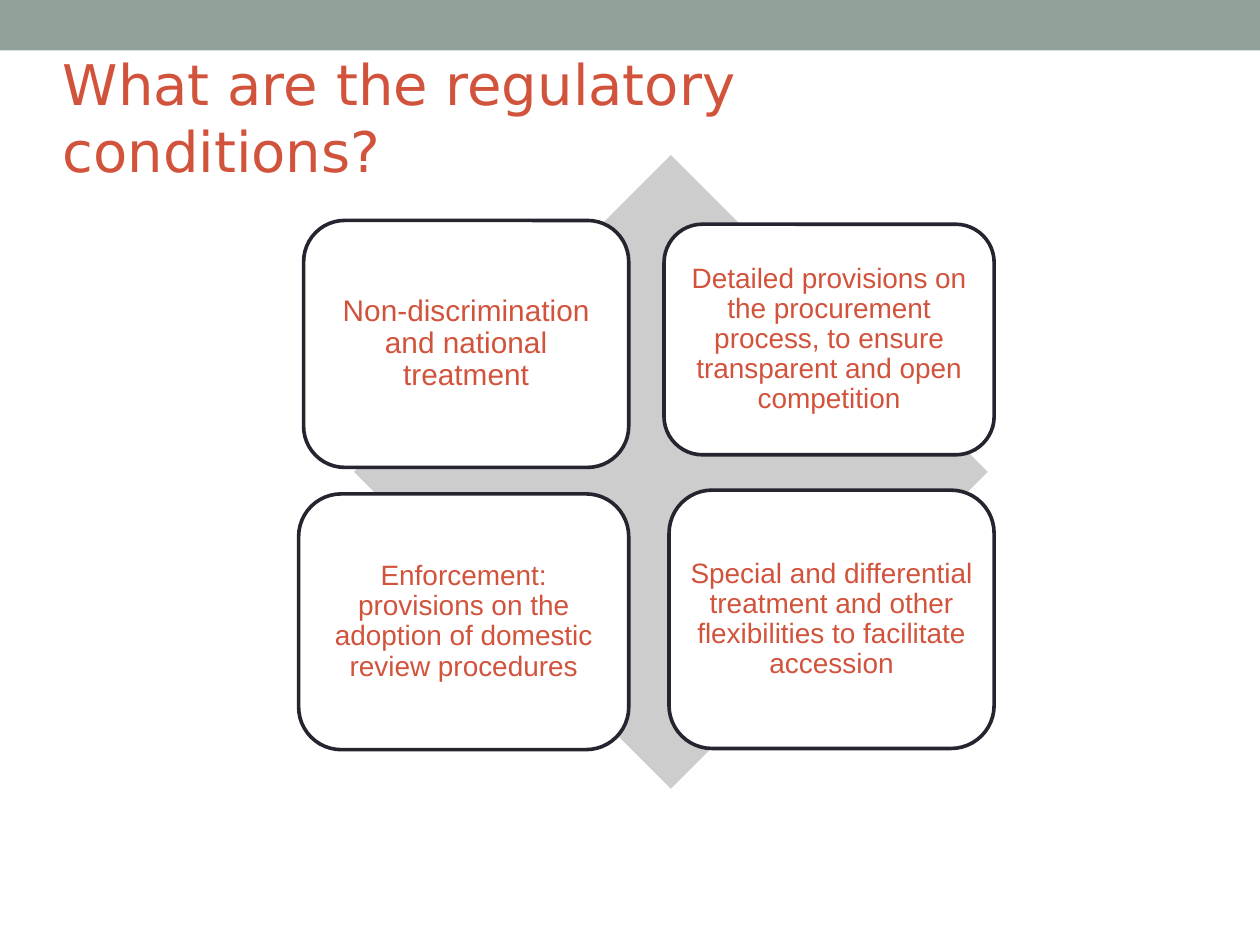
"""Build a slide that sets four regulatory conditions around a diamond."""
from pptx import Presentation
from pptx.dml.color import RGBColor
from pptx.enum.shapes import MSO_SHAPE
from pptx.enum.text import MSO_ANCHOR, PP_ALIGN
from pptx.util import Inches, Pt

RECTANGLE, DIAMOND = MSO_SHAPE.RECTANGLE, MSO_SHAPE.DIAMOND
ROUNDED = MSO_SHAPE.ROUNDED_RECTANGLE
LEFT, CENTER = PP_ALIGN.LEFT, PP_ALIGN.CENTER
TOP, MIDDLE = MSO_ANCHOR.TOP, MSO_ANCHOR.MIDDLE

COLORS = {"band": "93A299", "accent": "D2533C", "diamond": "CDCDCE",
          "card": "FFFFFF", "outline": "25252F"}
TITLE = "What are the regulatory conditions?"
CARDS = [
    {"text": "Non-discrimination and national treatment",
     "column": 0, "top": 17.5, "size": (25.8, 19.6), "points": 17},
    {"text": "Detailed provisions on the procurement process, "
             "to ensure transparent and open competition",
     "column": 1, "top": 17.8, "size": (26.2, 18.3), "points": 16},
    {"text": "Enforcement: provisions on the adoption of domestic review procedures",
     "column": 0, "top": 39.2, "size": (26.2, 20.3), "points": 16},
    {"text": "Special and differential treatment and other flexibilities "
             "to facilitate accession",
     "column": 1, "top": 38.9, "size": (25.8, 20.5), "points": 16},
]

COLUMNS, ROWS = 100, 75
CELL = Inches(0.1)
COLUMN_RIGHT_EDGES = (49.9, 78.9)
BAND_AREA = (0, 0, COLUMNS, 4)
TITLE_AREA = (4, 3.4, 77.9, 11.8)
DIAMOND_AREA = (28.1, 12.3, 50.3, 50.3)
MARGINS = ("margin_left", "margin_right", "margin_top", "margin_bottom")
TITLE_FORMAT = {
    "frame": {"word_wrap": True, "vertical_anchor": TOP},
    "para": {"alignment": LEFT},
    "font": {"name": "DejaVu Sans", "size": Pt(32)},
}
CARD_FORMAT = {
    "frame": {"word_wrap": True, "vertical_anchor": MIDDLE,
              **dict.fromkeys(MARGINS, Inches(0.07))},
    "para": {"alignment": CENTER, "line_spacing": 0.9},
    "font": {"name": "Arial"},
}


def color(name):
    return RGBColor.from_string(COLORS[name])


def on_grid(area):
    return [round(cells * CELL) for cells in area]


def apply(target, values):
    for name, value in values.items():
        setattr(target, name, value)


def add_block(page, kind, area, fill, outline=None):
    block = page.shapes.add_shape(kind, *on_grid(area))
    block.shadow.inherit = False
    block.fill.solid()
    block.fill.fore_color.rgb = color(fill)
    if outline:
        block.line.color.rgb = color(outline)
        block.line.width = Pt(2.08)
    else:
        block.line.fill.background()
    return block


def write(box, text, style):
    frame = box.text_frame
    para = frame.paragraphs[0]
    span = para.add_run()
    span.text = text
    for target, part in ((frame, "frame"), (para, "para"), (span.font, "font")):
        apply(target, style[part])
    span.font.color.rgb = color("accent")
    return span


def add_card(page, card):
    width, height = card["size"]
    left = COLUMN_RIGHT_EDGES[card["column"]] - width
    box = add_block(page, ROUNDED, (left, card["top"], width, height), "card", "outline")
    write(box, card["text"], CARD_FORMAT).font.size = Pt(card["points"])


def main():
    deck = Presentation()
    deck.slide_width, deck.slide_height = on_grid((COLUMNS, ROWS))
    page = deck.slides.add_slide(deck.slide_layouts[6])
    add_block(page, RECTANGLE, BAND_AREA, "band")
    write(page.shapes.add_textbox(*on_grid(TITLE_AREA)), TITLE, TITLE_FORMAT)
    add_block(page, DIAMOND, DIAMOND_AREA, "diamond")
    for card in CARDS:
        add_card(page, card)
    deck.save("out.pptx")


if __name__ == "__main__":
    main()
